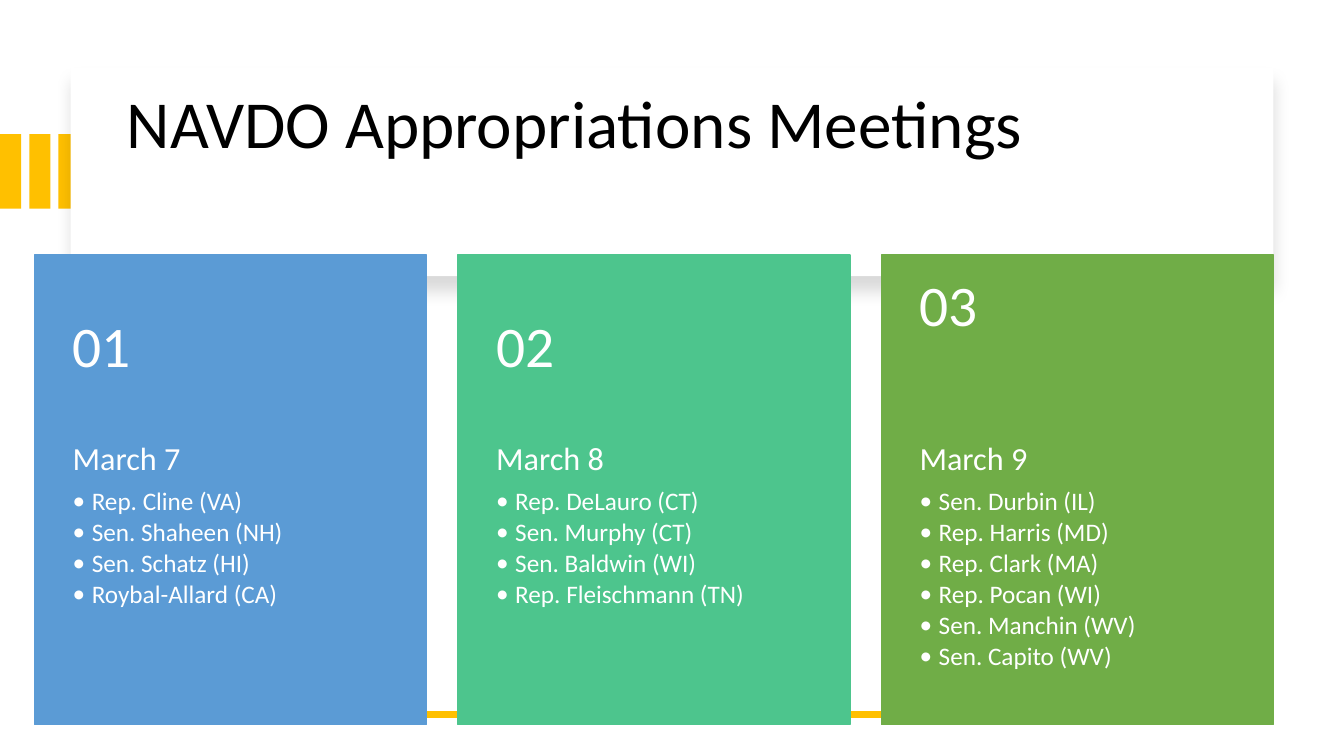
from dataclasses import dataclass

from lxml.etree import SubElement
from pptx import Presentation
from pptx.dml.color import RGBColor
from pptx.enum.shapes import MSO_CONNECTOR, MSO_SHAPE
from pptx.enum.text import MSO_ANCHOR
from pptx.oxml.ns import qn
from pptx.shapes.autoshape import Shape
from pptx.slide import Slide
from pptx.text.text import TextFrame, _Paragraph
from pptx.util import Inches, Pt

WHITE = RGBColor(0xFF, 0xFF, 0xFF)
BLACK = RGBColor(0x00, 0x00, 0x00)
GOLD = RGBColor(0xFF, 0xC0, 0x00)
BLUE = RGBColor(0x5B, 0x9B, 0xD5)
TEAL = RGBColor(0x4D, 0xC5, 0x8D)
GREEN = RGBColor(0x70, 0xAD, 0x47)

FONT = "Calibri"
CARD_LEFT, CARD_TOP, CARD_STEP = 0.34, 2.53, 4.2
CARD_WIDTH, NUMBER_HEIGHT, LIST_HEIGHT = 3.89, 1.86, 2.8
BULLET_INDENT = 0.19


@dataclass(frozen=True)
class Box:
    left: float
    top: float
    width: float
    height: float

    def lengths(self) -> tuple[int, ...]:
        return tuple(Inches(side) for side in (self.left, self.top, self.width, self.height))


@dataclass(frozen=True)
class Insets:
    left: float
    top: float
    right: float
    bottom: float


@dataclass(frozen=True)
class MeetingDay:
    number: str
    date: str
    members: tuple[str, ...]
    color: RGBColor
    number_bottom: float = 0.18


DAYS = (
    MeetingDay("01", "March 7", (
        "Rep. Cline (VA)", "Sen. Shaheen (NH)", "Sen. Schatz (HI)", "Roybal-Allard (CA)",
    ), BLUE),
    MeetingDay("02", "March 8", (
        "Rep. DeLauro (CT)", "Sen. Murphy (CT)", "Sen. Baldwin (WI)", "Rep. Fleischmann (TN)",
    ), TEAL),
    MeetingDay("03", "March 9", (
        "Sen. Durbin (IL)", "Rep. Harris (MD)", "Rep. Clark (MA)",
        "Rep. Pocan (WI)", "Sen. Manchin (WV)", "Sen. Capito (WV)",
    ), GREEN, number_bottom=0.99),
)


def add_rectangle(page: Slide, box: Box, color: RGBColor, outlined: bool = False) -> Shape:
    shape = page.shapes.add_shape(MSO_SHAPE.RECTANGLE, *box.lengths())
    shape.shadow.inherit = False
    shape.fill.solid()
    shape.fill.fore_color.rgb = color
    if outlined:
        shape.line.color.rgb = color
        shape.line.width = Pt(1)
    else:
        shape.line.fill.background()
    return shape


def add_drop_shadow(shape: Shape) -> None:
    effects = shape._element.spPr.find(qn("a:effectLst"))
    shadow = SubElement(
        effects, qn("a:outerShdw"), blurRad=str(Pt(11)), dist=str(Pt(10)),
        dir=str(90 * 60000), algn="t", rotWithShape="0",
    )
    color = SubElement(shadow, qn("a:srgbClr"), val=str(BLACK))
    SubElement(color, qn("a:alpha"), val="15000")


def add_text_frame(page: Slide, box: Box, insets: Insets, anchor: MSO_ANCHOR) -> TextFrame:
    frame = page.shapes.add_textbox(*box.lengths()).text_frame
    frame.word_wrap = True
    frame.vertical_anchor = anchor
    frame.margin_left = Inches(insets.left)
    frame.margin_top = Inches(insets.top)
    frame.margin_right = Inches(insets.right)
    frame.margin_bottom = Inches(insets.bottom)
    return frame


def write_line(para: _Paragraph, text: str, size: float, color: RGBColor, after: float = 0) -> None:
    para.line_spacing = 0.9
    para.space_after = Pt(after)
    span = para.add_run()
    span.text = text
    span.font.name = FONT
    span.font.size = Pt(size)
    span.font.color.rgb = color


def add_bullet(para: _Paragraph) -> None:
    para.level = 1
    properties = para._p.get_or_add_pPr()
    properties.set("marL", str(Inches(BULLET_INDENT)))
    properties.set("indent", str(-Inches(BULLET_INDENT)))
    SubElement(properties, qn("a:buFont"), typeface=FONT)
    SubElement(properties, qn("a:buChar"), char="•")


def add_gold_line(page: Slide) -> None:
    line = page.shapes.add_connector(
        MSO_CONNECTOR.STRAIGHT, Inches(12.42), Inches(7.09), Inches(0.92), Inches(7.09)
    )
    line.line.color.rgb = GOLD
    line.line.width = Pt(4.5)
    SubElement(line._element.spPr, qn("a:effectLst"))


def add_header(page: Slide) -> None:
    for index in range(3):
        add_rectangle(page, Box(index * 0.29, 1.33, 0.21, 0.74), GOLD)
    add_drop_shadow(add_rectangle(page, Box(0.7, 0.67, 11.93, 2.07), WHITE))
    title = add_text_frame(
        page, Box(1.16, 0.41, 11.13, 1.7), Insets(0.1, 0.05, 0.1, 0.05), MSO_ANCHOR.MIDDLE
    )
    write_line(title.paragraphs[0], "NAVDO Appropriations Meetings", 48, BLACK)


def add_day_card(page: Slide, day: MeetingDay, left: float) -> None:
    add_rectangle(
        page, Box(left, CARD_TOP, CARD_WIDTH, NUMBER_HEIGHT + LIST_HEIGHT), day.color, outlined=True
    )
    meetings = add_text_frame(
        page, Box(left, CARD_TOP + NUMBER_HEIGHT, CARD_WIDTH, LIST_HEIGHT),
        Insets(0.38, 0, 0.38, 0.36), MSO_ANCHOR.TOP,
    )
    write_line(meetings.paragraphs[0], day.date, 23, WHITE, after=8)
    for member in day.members:
        para = meetings.add_paragraph()
        write_line(para, member, 18, WHITE, after=2.7)
        add_bullet(para)
    number = add_text_frame(
        page, Box(left, CARD_TOP, CARD_WIDTH, NUMBER_HEIGHT),
        Insets(0.38, 0.18, 0.38, day.number_bottom), MSO_ANCHOR.MIDDLE,
    )
    write_line(number.paragraphs[0], day.number, 41, WHITE)


def main() -> None:
    deck = Presentation()
    deck.slide_width = Inches(13.33)
    deck.slide_height = Inches(7.5)
    page = deck.slides.add_slide(deck.slide_layouts[6])
    add_header(page)
    add_gold_line(page)
    for index, day in enumerate(DAYS):
        add_day_card(page, day, CARD_LEFT + index * CARD_STEP)
    deck.save("out.pptx")


if __name__ == "__main__":
    main()
